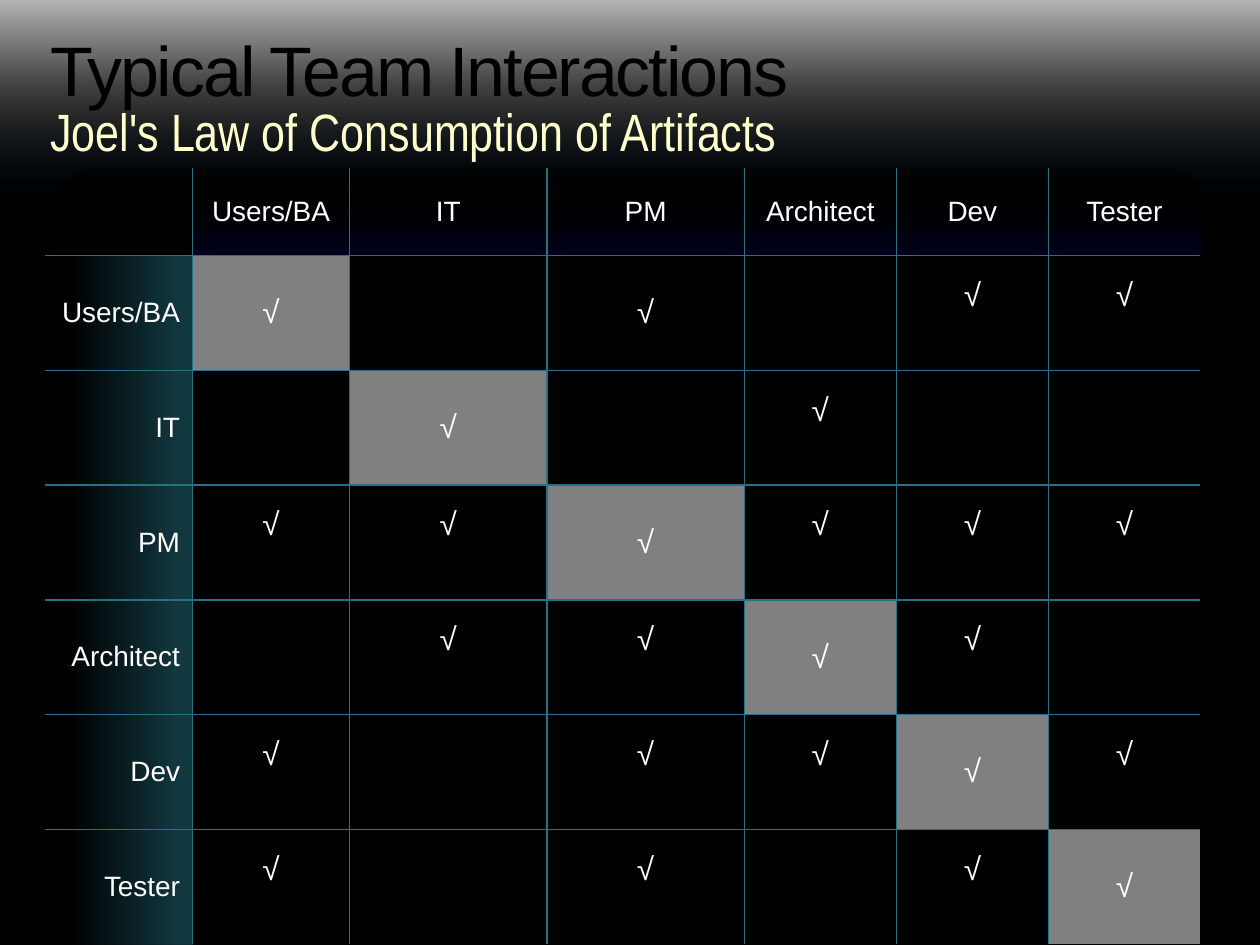
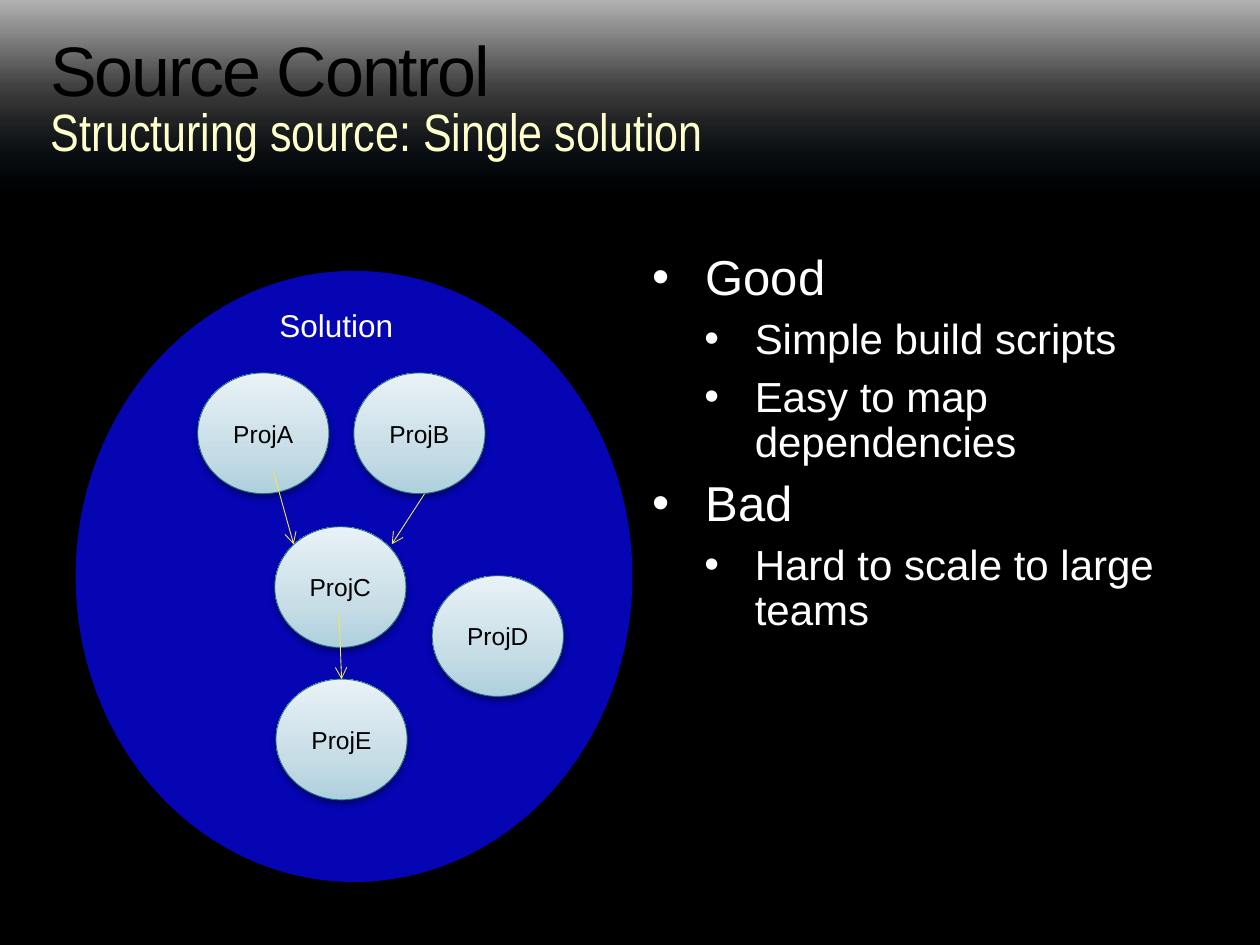
import pptx
import pptx.util
import pptx.dml.color
import pptx.enum.shapes
import pptx.enum.text
import pptx.oxml
import pptx.oxml.ns

Pt = pptx.util.Pt
qn = pptx.oxml.ns.qn
SHAPE = pptx.enum.shapes.MSO_SHAPE
ALIGN = pptx.enum.text.PP_ALIGN
ANCHOR = pptx.enum.text.MSO_ANCHOR

COLORS = {
    "black": "000000", "white": "FFFFFF", "cream": "FFFFCC", "blue": "0070C0",
    "navy": "02024A", "teal": "267182", "gray": "808080", "solution": "0505B4",
    "pale": "E9F2F6", "mist": "C7DDE6", "sky": "AECFDD", "rim": "237081",
    "arrow": "F2E949",
}
GRADIENTS = {
    "band": [(0, "blue", 0), (41, "white", 15), (56, "white", 25), (100, "white", 70)],
    "header": [(0, "navy", 40), (80, "black", 0)],
    "row_label": [(9, "teal", 50), (83, "teal", 0)],
    "project": [(0, "sky", 100), (35, "mist", 100), (100, "pale", 100)],
}
FONTS = {
    "title": {"name": "Arial", "size": Pt(40), "color": "black"},
    "subtitle": {"name": "Arial Narrow", "size": Pt(30), "color": "cream"},
    "label": {"name": "Arial", "size": Pt(16), "color": "white"},
    "tick": {"name": "Arial", "size": Pt(18), "color": "white"},
    "point": {"name": "Arial", "size": Pt(28), "color": "white"},
    "subpoint": {"name": "Arial", "size": Pt(24), "color": "white"},
    "project": {"name": "Arial", "size": Pt(14), "color": "black"},
}
BULLETS = {"point": (30.24, -30.24), "subpoint": (58.3, -28.8)}

ROLES = ["Users/BA", "IT", "PM", "Architect", "Dev", "Tester"]
CONSUMERS = {
    "Users/BA": ["PM", "Dev", "Tester"],
    "IT": ["Architect"],
    "PM": ["Users/BA", "IT", "Architect", "Dev", "Tester"],
    "Architect": ["IT", "PM", "Dev"],
    "Dev": ["Users/BA", "PM", "Architect", "Tester"],
    "Tester": ["Users/BA", "PM", "Dev"],
}
CENTERED_TICKS = [(role, role) for role in ROLES] + [("Users/BA", "PM")]
COLUMN_WIDTHS = [84.3, 89.7, 112.8, 112.8, 86.9, 86.9, 86.9]
HEADER_HEIGHT, ROW_HEIGHT = 50, 65.6

PROJECT_SIZE = (75, 69)
PROJECTS = {
    "ProjA": (69.8, 58.3), "ProjB": (159, 58.3), "ProjC": (113.8, 146.2),
    "ProjE": (114.5, 233.3), "ProjD": (203.8, 174.2),
}
DEPENDENCIES = [
    ((113, 114.5), (124.6, 156.2), None),
    ((199.4, 127.4), (180.7, 156.2), None),
    ((150.5, 195.1), (152, 233.3), "ProjE"),
]
POINTS = [
    ("point", "Good"),
    ("subpoint", "Simple build scripts"),
    ("subpoint", "Easy to map dependencies"),
    ("point", "Bad"),
    ("subpoint", "Hard to scale to large teams"),
]


def rgb(color):
    return pptx.dml.color.RGBColor.from_string(COLORS[color])


def apply(target, values):
    for attribute, value in values.items():
        setattr(target, attribute, value)


def lengths(box):
    return [Pt(value) for value in box]


def add_child(parent, tag, **attributes):
    child = pptx.oxml.parse_xml(f'<{tag} {pptx.oxml.ns.nsdecls("a")}/>')
    for key, value in attributes.items():
        child.set(key, str(value))
    parent.append(child)
    return child


def add_color(parent, color, alpha):
    srgb = add_child(parent, "a:srgbClr", val=COLORS[color])
    add_child(srgb, "a:alpha", val=alpha * 1000)


def fill_solid(fill, color):
    fill.solid()
    fill.fore_color.rgb = rgb(color)


def fill_gradient(owner, element, name, angle=90):
    owner.fill.gradient()
    owner.fill.gradient_angle = angle
    stops = element.find(".//" + qn("a:gsLst"))
    for stop in list(stops):
        stops.remove(stop)
    for position, color, alpha in GRADIENTS[name]:
        add_color(add_child(stops, "a:gs", pos=position * 1000), color, alpha)


def add_shadow(shape, blur):
    effects = shape._element.spPr.find(qn("a:effectLst"))
    shadow = add_child(effects, "a:outerShdw", blurRad=Pt(blur), dist=Pt(2),
                       dir=5400000, rotWithShape=0)
    add_color(shadow, "black", 38)


def add_shape(slide, kind, box):
    shape = slide.shapes.add_shape(kind, *lengths(box))
    shape.shadow.inherit = False
    shape.line.fill.background()
    return shape


def write(paragraph, text, style):
    run = paragraph.add_run()
    run.text = text
    values = dict(FONTS[style])
    run.font.color.rgb = rgb(values.pop("color"))
    apply(run.font, values)
    return run


def add_text_frame(slide, box, margins, wrap=True):
    frame = slide.shapes.add_textbox(*lengths(box)).text_frame
    sides = ("margin_left", "margin_top", "margin_right", "margin_bottom")
    apply(frame, dict(zip(sides, lengths(margins)), word_wrap=wrap))
    return frame


def add_heading(slide, title, subtitle):
    band = add_shape(slide, SHAPE.RECTANGLE, (0, 0, 720, 110.9))
    fill_gradient(band, band._element.spPr, "band")
    add_shadow(band, 3.1)
    lines = [("title", title, (28.8, 17.3, 660, 48.2), (0, 3.6, 7.2, 3.6)),
             ("subtitle", subtitle, (28.8, 60.8, 661, 34), (0, 0, 7.2, 0))]
    for style, text, box, margins in lines:
        paragraph = add_text_frame(slide, box, margins).paragraphs[0]
        paragraph.line_spacing = 0.9
        run = write(paragraph, text, style)
        if style == "title":
            run._r.get_or_add_rPr().set("spc", "-120")


def new_slide(deck, title, subtitle):
    slide = deck.slides.add_slide(deck.slide_layouts[6])
    fill_solid(slide.background.fill, "black")
    add_heading(slide, title, subtitle)
    return slide


def add_borders(cell, open_sides):
    properties = cell._tc.get_or_add_tcPr()
    for index, side in enumerate("LRTB"):
        line = add_child(properties, f"a:ln{side}", w=Pt(1))
        if side in open_sides:
            add_child(line, "a:noFill")
        else:
            add_color(add_child(line, "a:solidFill"), "teal", 100)
        properties.insert(index, line)


def fill_cell(cell, text, style, alignment):
    cell.vertical_anchor = ANCHOR.MIDDLE
    paragraph = cell.text_frame.paragraphs[0]
    paragraph.alignment = alignment
    if text:
        write(paragraph, text, style)


def add_panel(slide, box):
    panel = add_shape(slide, SHAPE.ROUNDED_RECTANGLE, box)
    panel.adjustments[0] = 0.06
    fill_solid(panel.fill, "black")
    add_child(panel._element.spPr.find(".//" + qn("a:srgbClr")), "a:alpha", val=50000)


def add_interactions(slide, left, top):
    count = len(ROLES) + 1
    heights = [HEADER_HEIGHT] + [ROW_HEIGHT] * len(ROLES)
    box = (left, top, sum(COLUMN_WIDTHS), sum(heights))
    table = slide.shapes.add_table(count, count, *lengths(box)).table
    apply(table, {"first_row": False, "horz_banding": False})
    for column, width in zip(table.columns, COLUMN_WIDTHS):
        column.width = Pt(width)
    for row, height in zip(table.rows, heights):
        row.height = Pt(height)

    for r, producer in enumerate([""] + ROLES):
        for c, consumer in enumerate([""] + ROLES):
            cell = table.cell(r, c)
            cell.fill.background()
            if r == 0:
                fill_cell(cell, consumer, "label", ALIGN.CENTER)
                if c:
                    fill_gradient(cell, cell._tc, "header")
            elif c == 0:
                fill_cell(cell, producer, "label", ALIGN.RIGHT)
                fill_gradient(cell, cell._tc, "row_label", 180)
            elif r == c or consumer in CONSUMERS[producer]:
                fill_cell(cell, "√", "tick", ALIGN.CENTER)
                if (producer, consumer) not in CENTERED_TICKS:
                    cell.margin_bottom = Pt(23.6)
                if r == c:
                    fill_solid(cell.fill, "gray")
            edges = {"L": c == 0, "R": c == count - 1, "T": r == 0, "B": r == count - 1}
            add_borders(cell, [side for side, is_open in edges.items() if is_open])


def add_project(slide, name, box):
    project = add_shape(slide, SHAPE.OVAL, box)
    fill_gradient(project, project._element.spPr, "project")
    project.line.color.rgb = rgb("rim")
    project.line.width = Pt(0.5)
    add_shadow(project, 3.5)
    frame = project.text_frame
    apply(frame, {"margin_left": Pt(8.6), "margin_right": Pt(8.6), "margin_top": Pt(4.3),
                  "margin_bottom": Pt(4.3), "vertical_anchor": ANCHOR.MIDDLE})
    frame.paragraphs[0].alignment = ALIGN.CENTER
    write(frame.paragraphs[0], name, "project")
    return project


def add_solution(slide, box):
    left, top = box[:2]
    fill_solid(add_shape(slide, SHAPE.OVAL, box).fill, "solution")
    projects = {
        name: add_project(slide, name, (left + x, top + y, *PROJECT_SIZE))
        for name, (x, y) in PROJECTS.items()
    }
    for (x1, y1), (x2, y2), target in DEPENDENCIES:
        arrow = slide.shapes.add_connector(
            pptx.enum.shapes.MSO_CONNECTOR.STRAIGHT,
            *lengths((left + x1, top + y1, left + x2, top + y2)))
        arrow.line.color.rgb = rgb("arrow")
        arrow.line.width = Pt(0.5)
        add_child(arrow.line._get_or_add_ln(), "a:tailEnd", type="arrow")
        add_child(arrow._element.spPr, "a:effectLst")
        if target:
            arrow.end_connect(projects[target], 0)
    label = add_text_frame(slide, (left + 109.4, top + 16.6, 80, 29),
                           (7.2, 3.6, 7.2, 3.6), wrap=False)
    write(label.paragraphs[0], "Solution", "tick")


def add_points(slide, box):
    frame = add_text_frame(slide, box, (0, 0, 0, 0))
    for index, (style, text) in enumerate(POINTS):
        paragraph = frame.add_paragraph() if index else frame.paragraphs[0]
        margin, indent = BULLETS[style]
        properties = paragraph._p.get_or_add_pPr()
        properties.set("marL", str(Pt(margin)))
        properties.set("indent", str(Pt(indent)))
        add_child(properties, "a:buFont", typeface="Arial")
        add_child(properties, "a:buChar", char="•")
        apply(paragraph, {"level": int(style == "subpoint"), "line_spacing": 0.9,
                          "space_before": Pt(7 if index else 0)})
        write(paragraph, text, style)


def main():
    deck = pptx.Presentation()
    apply(deck, {"slide_width": Pt(720), "slide_height": Pt(540)})

    interactions = new_slide(deck, "Typical Team Interactions",
                             "Joel's Law of Consumption of Artifacts")
    add_panel(interactions, (28.8, 95.8, 661.7, 444.2))
    add_interactions(interactions, 25.8, 96)

    source_control = new_slide(deck, "Source Control",
                               "Structuring source: Single solution")
    add_solution(source_control, (43.2, 154.8, 318.2, 349.2))
    add_points(source_control, (373, 144.7, 316, 220.3))

    deck.save("out.pptx")


if __name__ == "__main__":
    main()
